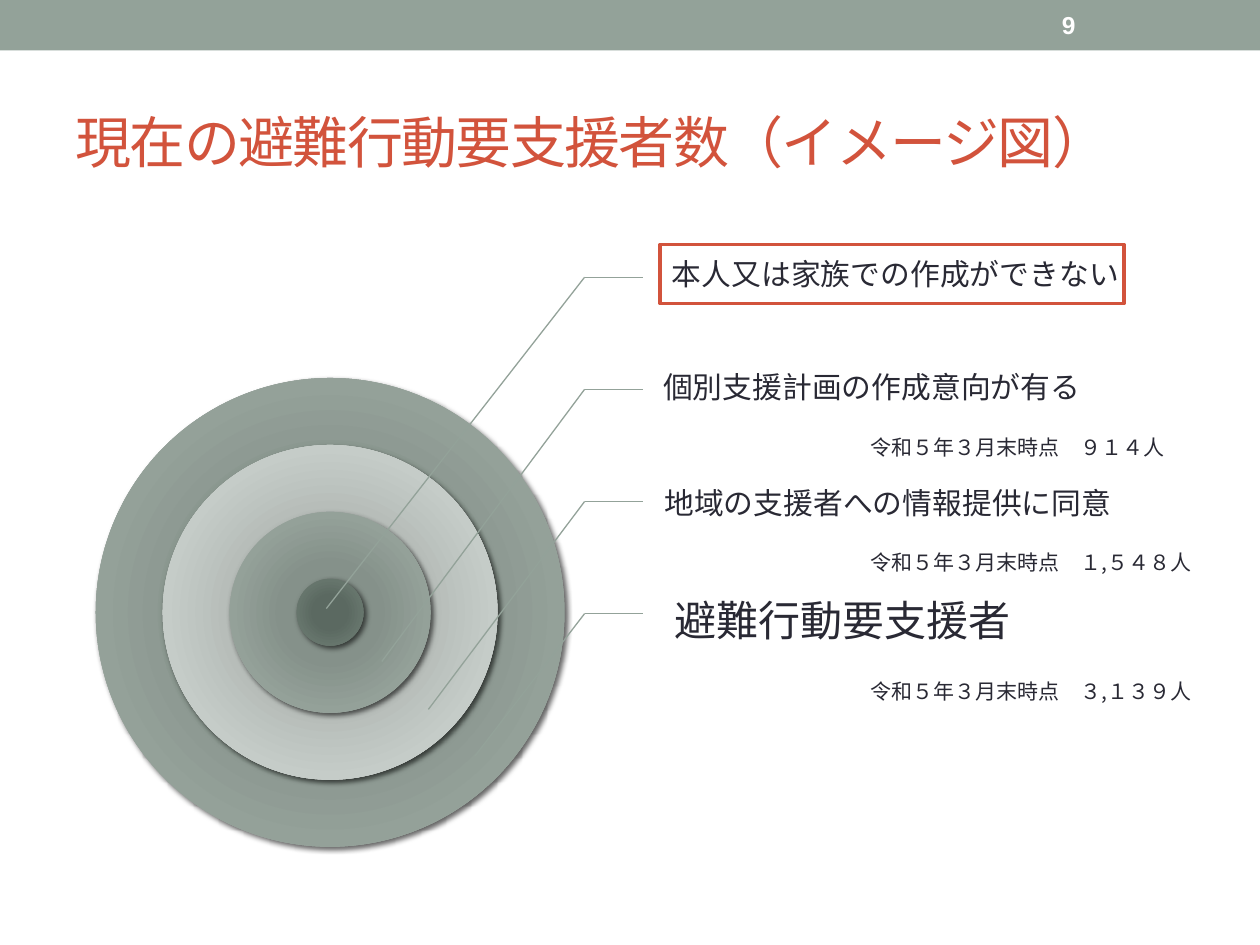
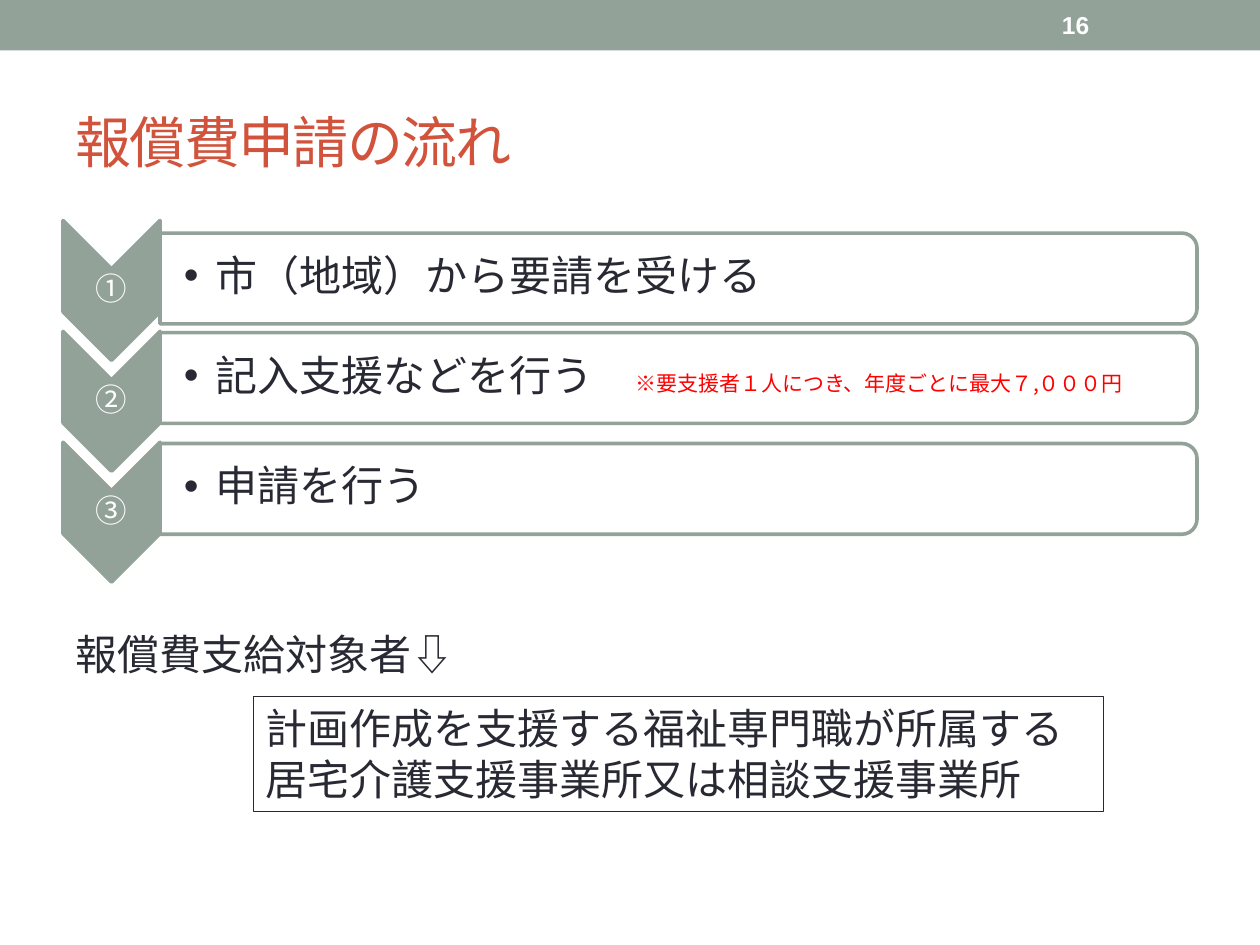
import pptx
import pptx.dml.color
import pptx.enum.shapes
import pptx.enum.text
import pptx.oxml
import pptx.oxml.ns
import pptx.util
from lxml import etree

Inches = pptx.util.Inches
Pt = pptx.util.Pt
RGBColor = pptx.dml.color.RGBColor
SHAPE = pptx.enum.shapes.MSO_SHAPE
ANCHOR = pptx.enum.text.MSO_ANCHOR
ALIGN = pptx.enum.text.PP_ALIGN
qn = pptx.oxml.ns.qn

SAGE = RGBColor(0x93, 0xA2, 0x99)
BRICK = RGBColor(0xD2, 0x53, 0x3C)
INK = RGBColor(0x29, 0x29, 0x34)
RED = RGBColor(0xFF, 0x00, 0x00)
WHITE = RGBColor(0xFF, 0xFF, 0xFF)

# Ring gradients, from the centre outwards
MID_RING = [RGBColor.from_string(c) for c in ("849189", "85918A", "94A199", "9DA7A1")]
PALE_RING = [RGBColor.from_string(c) for c in ("B0B7B3", "B1B7B3", "C5CCC8", "CFD4D1")]
DARK_RING = [RGBColor.from_string(c) for c in ("5B6960", "5B6961", "66756C", "6D7871")]
GRADIENT_STOPS = (0, 34, 70, 100)

JAPANESE = "Noto Sans CJK JP"
LATIN = "Arial"
DEFAULT_INSETS = (0.1, 0.05, 0.1, 0.05)


# Shared helpers
def write(frame, text, size=24, color=INK, font=JAPANESE, bold=False,
          align=None, line_spacing=None, tracking=None):
    """Append a formatted run to the first paragraph of the frame."""
    paragraph = frame.paragraphs[0]
    if align is not None:
        paragraph.alignment = align
    if line_spacing:
        paragraph.line_spacing = line_spacing
    run = paragraph.add_run()
    run.text = text
    run.font.size = Pt(size)
    run.font.bold = bold
    run.font.name = font
    run.font.color.rgb = color
    properties = run.font._element
    etree.SubElement(properties, qn("a:ea")).set("typeface", font)
    if tracking:
        properties.set("spc", str(tracking * 100))


def prepare_frame(shape, insets=DEFAULT_INSETS, anchor=ANCHOR.TOP):
    frame = shape.text_frame
    frame.word_wrap = True
    frame.vertical_anchor = anchor
    (frame.margin_left, frame.margin_top,
     frame.margin_right, frame.margin_bottom) = map(Inches, insets)
    return frame


def add_frame(slide, box, insets=DEFAULT_INSETS, anchor=ANCHOR.TOP):
    return prepare_frame(slide.shapes.add_textbox(*map(Inches, box)), insets, anchor)


def add_shape(slide, kind, box, fill=None, line=None, weight=2.08, rotation=0):
    shape = slide.shapes.add_shape(kind, *map(Inches, box))
    shape.shadow.inherit = False
    shape.rotation = rotation
    if fill is None:
        shape.fill.background()
    else:
        shape.fill.solid()
        shape.fill.fore_color.rgb = fill
    if line is None:
        shape.line.fill.background()
    else:
        shape.line.color.rgb = line
        shape.line.width = Pt(weight)
    return shape


def add_upright_as_rotated(slide, kind, box, **style):
    """Place a shape turned by 90 degrees so that it fills the visible box."""
    left, top, width, height = box
    shift = (width - height) / 2
    return add_shape(slide, kind, (left + shift, top - shift, height, width),
                     rotation=90, **style)


def add_line(slide, start, end):
    line = slide.shapes.add_connector(
        pptx.enum.shapes.MSO_CONNECTOR.STRAIGHT, *map(Inches, (*start, *end)))
    line.line.color.rgb = SAGE
    line.line.width = Pt(0.75)
    etree.SubElement(line._element.spPr, qn("a:effectLst"))


def add_base_slide(deck, title, number):
    """Blank slide with the band, page number and title."""
    slide = deck.slides.add_slide(deck.slide_layouts[6])
    add_shape(slide, SHAPE.RECTANGLE, (0, 0, 10, 0.4), fill=SAGE)
    write(add_frame(slide, (0.5, 0.58, 9, 1.08), anchor=ANCHOR.MIDDLE),
          title, size=32, color=BRICK, tracking=-1)
    write(add_frame(slide, (8.33, 0.02, 1.17, 0.36), anchor=ANCHOR.MIDDLE),
          number, size=14, color=WHITE, font=LATIN, bold=True)
    return slide


# Slide 1: nested circles with callouts
def add_ring(slide, box, colors):
    ring = add_shape(slide, SHAPE.OVAL, box, fill=colors[0])
    properties = ring._element.spPr
    stops = "".join(f'<a:gs pos="{position * 1000}"><a:srgbClr val="{color}"/></a:gs>'
                    for position, color in zip(GRADIENT_STOPS, colors))
    gradient = pptx.oxml.parse_xml(
        f'<a:gradFill {pptx.oxml.ns.nsdecls("a")} rotWithShape="1"><a:gsLst>{stops}</a:gsLst>'
        '<a:path path="circle"><a:fillToRect l="100000" t="100000" r="100000" b="100000"/>'
        '</a:path></a:gradFill>')
    properties.replace(properties.find(qn("a:solidFill")), gradient)
    shadow = etree.SubElement(properties.find(qn("a:effectLst")), qn("a:outerShdw"),
                              blurRad=str(Pt(3)), dist=str(Pt(2)), dir="2700000",
                              algn="tl", rotWithShape="0")
    shade = etree.SubElement(shadow, qn("a:srgbClr"), val="000000")
    etree.SubElement(shade, qn("a:alpha"), val="60000")


def add_rings(slide, box):
    left, top, size = box
    step = size / 7
    for level, colors in enumerate((MID_RING, PALE_RING, MID_RING, DARK_RING)):
        inset = level * step
        diameter = size - 2 * inset
        add_ring(slide, (left + inset, top + inset, diameter, diameter), colors)


def add_callouts(slide, left, top):
    """Leaders bend at (left, top) and then at equal steps downwards."""
    pitch, arm = 0.89, 0.46
    targets = ((2.59, 4.83), (3.03, 5.25), (3.4, 5.63), (3.77, 6))
    labels = (
        ("本人又は家族での作成ができない", 17, (0.56, -0.43, 3.73, 0.84)),
        ("個別支援計画の作成意向が有る", 17, (0.49, -0.32, 3.79, 0.64)),
        ("地域の支援者への情報提供に同意", 17, (0.5, -0.42, 3.75, 0.89)),
        ("避難行動要支援者", 24, (0.53, -0.37, 3.3, 0.89)),
    )
    for row, (target, (label, size, (dx, dy, width, height))) in enumerate(zip(targets, labels)):
        bend = (left, top + row * pitch)
        add_line(slide, bend, (left + arm, bend[1]))
        add_line(slide, bend, target)
        insets = (size * 0.0078, 0.02, 0.02, 0.02)
        frame = add_frame(slide, (left + dx, bend[1] + dy, width, height),
                          insets, ANCHOR.MIDDLE)
        write(frame, label, size=size, line_spacing=0.9)


def add_head_counts(slide, left):
    for top, count in ((3.4, "９１４人"), (4.31, "１,５４８人"), (5.34, "３,１３９人")):
        write(add_frame(slide, (left, top, 3.05, 0.3)),
              f"令和５年３月末時点　{count}", size=12)


def build_target_slide(deck):
    slide = add_base_slide(deck, "現在の避難行動要支援者数（イメージ図）", "9")
    add_rings(slide, (0.76, 3, 3.72))
    add_callouts(slide, 4.64, 2.2)
    add_head_counts(slide, 6.81)
    # Frame around the key group
    add_shape(slide, SHAPE.RECTANGLE, (5.24, 1.94, 3.68, 0.47), line=BRICK)


# Slide 2: application steps
def add_bullet(frame):
    properties = frame.paragraphs[0]._p.get_or_add_pPr()
    properties.set("marL", str(Inches(0.25)))
    properties.set("indent", str(Inches(-0.25)))
    etree.SubElement(properties, qn("a:buFont")).set("typeface", LATIN)
    etree.SubElement(properties, qn("a:buChar")).set("char", "•")


def add_step(slide, box, number, text, note, bar_drop):
    left, top, width, height = box
    arrow_width = 0.77
    add_upright_as_rotated(slide, SHAPE.CHEVRON, (left, top, arrow_width, height),
                           fill=SAGE, line=SAGE)
    write(add_frame(slide, (left, top + 0.39, arrow_width, 0.33), (0.01,) * 4, ANCHOR.MIDDLE),
          number, size=18, color=WHITE, align=ALIGN.CENTER, line_spacing=0.9)

    bar_left, bar_top = left + arrow_width, top + bar_drop
    bar_width = width - arrow_width
    bar = add_upright_as_rotated(slide, SHAPE.ROUND_2_SAME_RECTANGLE,
                                 (bar_left, bar_top, bar_width, 0.72),
                                 fill=WHITE, line=SAGE)
    white = bar._element.spPr.find(qn("a:solidFill"))[0]
    etree.SubElement(white, qn("a:alpha"), val="90000")
    frame = add_frame(slide, (bar_left, bar_top + 0.03, bar_width, 0.65),
                      (0.19, 0.02, 0.02, 0.02), ANCHOR.MIDDLE)
    write(frame, text, line_spacing=0.9)
    if note:
        write(frame, note, size=12, color=RED)
    add_bullet(frame)


def add_steps(slide, left, top):
    steps = (
        ("①", "市（地域）から要請を受ける", "", 0.1),
        ("②", "記入支援などを行う　", "※要支援者１人につき、年度ごとに最大７,０００円", 0.01),
        ("③", "申請を行う", "", 0.01),
    )
    for row, step in enumerate(steps):
        add_step(slide, (left, top + row * 0.88, 9, 1.11), *step)


def add_recipients(slide, left, top):
    recipients = add_shape(slide, SHAPE.RECTANGLE, (left + 1.51, top + 0.59, 6.75, 0.91),
                           line=INK, weight=0.5)
    write(prepare_frame(recipients),
          "計画作成を支援する福祉専門職が所属する居宅介護支援事業所又は相談支援事業所",
          align=ALIGN.LEFT)
    write(add_frame(slide, (left, top, 3.48, 0.5)), "報償費支給対象者⇩")


def build_flow_slide(deck):
    slide = add_base_slide(deck, "報償費申請の流れ", "16")
    add_steps(slide, 0.5, 1.75)
    add_recipients(slide, 0.5, 4.94)


def main():
    deck = pptx.Presentation()
    deck.slide_width, deck.slide_height = Inches(10), Inches(7.5)
    build_target_slide(deck)
    build_flow_slide(deck)
    deck.save("out.pptx")


if __name__ == "__main__":
    main()
